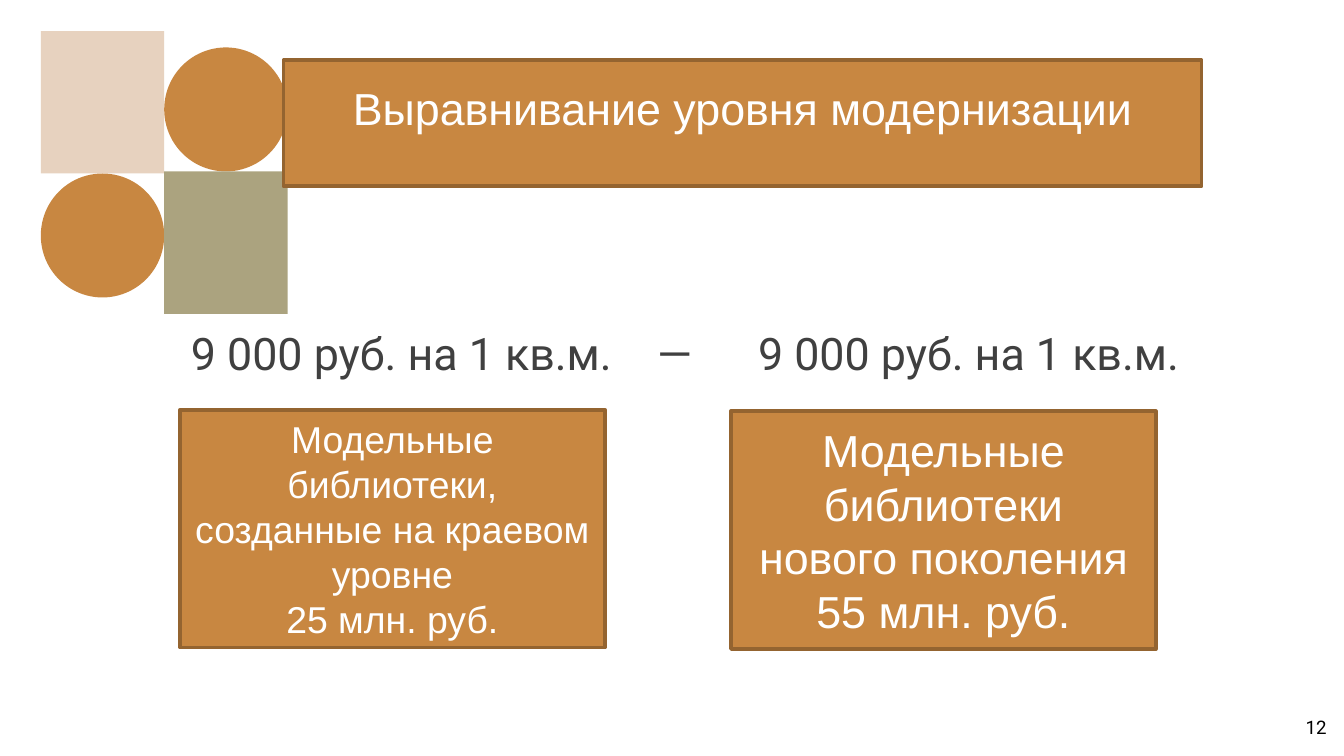
import dataclasses

import pptx
import pptx.dml.color
import pptx.enum.shapes
import pptx.enum.text
import pptx.util
from lxml import etree
from pptx.oxml.ns import qn

SHAPE = pptx.enum.shapes.MSO_SHAPE
ALIGN = pptx.enum.text.PP_ALIGN
ANCHOR = pptx.enum.text.MSO_ANCHOR
WIDTH = pptx.util.Inches(10)
HEIGHT = WIDTH * 9 // 16


@dataclasses.dataclass(frozen=True)
class Theme:
    sand: str = "E7D2BF"
    ochre: str = "C88741"
    olive: str = "ABA37F"
    border: str = "946430"
    white: str = "FFFFFF"
    gray: str = "404040"
    black: str = "000000"
    box_font: str = "Arial"
    text_font: str = "Roboto"
    large: int = 24
    medium: int = 20
    small: int = 10
    border_width: int = 2


THEME = Theme()


def rgb(color):
    return pptx.dml.color.RGBColor.from_string(color)


def place(x, y, w, h):
    """Turn percentages of the slide's size into left, top, width, height."""
    return [round(share * side / 100)
            for share, side in zip((x, y, w, h), (WIDTH, HEIGHT) * 2)]


def paint(sp, fill, border=None):
    sp.fill.solid()
    sp.fill.fore_color.rgb = rgb(fill)
    if border:
        sp.line.color.rgb = rgb(border)
        sp.line.width = pptx.util.Pt(THEME.border_width)
    else:
        sp.line.fill.background()


def write(sp, text, size, font, color, align, anchor):
    tf = sp.text_frame
    tf.text = text
    tf.word_wrap = True
    tf.auto_size = pptx.enum.text.MSO_AUTO_SIZE.NONE
    tf.vertical_anchor = anchor
    for p in tf.paragraphs:
        p.alignment = align
        for r in p.runs:
            r.font.size = pptx.util.Pt(size)
            r.font.name = font
            r.font.color.rgb = rgb(color)
    return tf


def add_shape(s, kind, box, fill, border=None):
    sp = s.shapes.add_shape(kind, *place(*box))
    sp.shadow.inherit = False
    paint(sp, fill, border)
    return sp


def add_motif(s):
    """Two columns of a square and a circle, each stacked without a gap."""
    left, tile_w, tile_h, circle_h = 3.04, 9.18, 18.85, 16.4
    columns = [
        (4.1, [(SHAPE.RECTANGLE, tile_h, THEME.sand), (SHAPE.OVAL, circle_h, THEME.ochre)]),
        (6.28, [(SHAPE.OVAL, circle_h, THEME.ochre), (SHAPE.RECTANGLE, tile_h, THEME.olive)]),
    ]
    for i, (top, parts) in enumerate(columns):
        for kind, h, fill in parts:
            add_shape(s, kind, (left + i * tile_w, top, tile_w, h), fill)
            top += h


def add_text(s, box, text, size, color, align, anchor):
    sp = s.shapes.add_textbox(*place(*box))
    tf = write(sp, text, size, THEME.text_font, color, align, anchor)
    tf.margin_left = tf.margin_right = tf.margin_top = tf.margin_bottom = 0
    return tf


def add_tab_stops(p, stops):
    tabs = etree.SubElement(p._p.get_or_add_pPr(), qn("a:tabLst"))
    for stop in stops:
        etree.SubElement(tabs, qn("a:tab"), pos=str(pptx.util.Inches(stop)), algn="l")


def add_rates(s):
    """Both rates on one line, with the dash between them."""
    rate = "9 000 руб. на 1 кв.м."
    tf = add_text(s, (13.4, 42, 81.9, 16), f"{rate}\t—\t{rate}",
                  THEME.large, THEME.gray, ALIGN.LEFT, ANCHOR.TOP)
    tf.margin_left = pptx.util.Inches(0.08)
    p = tf.paragraphs[0]
    p.line_spacing = 1.15
    add_tab_stops(p, (3.47, 4.22))


def add_card(s, x, y, text, size):
    sp = add_shape(s, SHAPE.RECTANGLE, (x, y, 31.6, 31.47), THEME.ochre, THEME.border)
    write(sp, text, size, THEME.box_font, THEME.white, ALIGN.CENTER, ANCHOR.MIDDLE)


def set_title(s, text):
    title = s.shapes.title
    title.left, title.top, title.width, title.height = place(21.1, 7.95, 68.3, 16.7)
    paint(title, THEME.ochre, THEME.border)
    tf = write(title, text, THEME.large, THEME.box_font, THEME.white,
               ALIGN.CENTER, ANCHOR.MIDDLE)
    tf.margin_bottom = pptx.util.Inches(0.28)
    # Bring the title in front of the motif
    s.shapes.element.append(title.element)


def main():
    prs = pptx.Presentation()
    prs.slide_width, prs.slide_height = WIDTH, HEIGHT
    s = prs.slides.add_slide(prs.slide_layouts[5])

    # Corner decoration
    add_motif(s)

    # Rates and slide number
    add_rates(s)
    add_text(s, (92.7, 92.3, 6, 7.65), "12", THEME.small, THEME.black,
             ALIGN.RIGHT, ANCHOR.MIDDLE)

    # Library cards
    add_card(s, 13.4, 54.2,
             "Модельные библиотеки,\nсозданные на краевом уровне\n25 млн. руб.",
             THEME.medium)
    add_card(s, 54.4, 54.4,
             "Модельные библиотеки\nнового поколения\n55 млн. руб.",
             THEME.large)

    # Title bar
    set_title(s, "Выравнивание уровня модернизации")
    prs.save("out.pptx")


if __name__ == "__main__":
    main()
